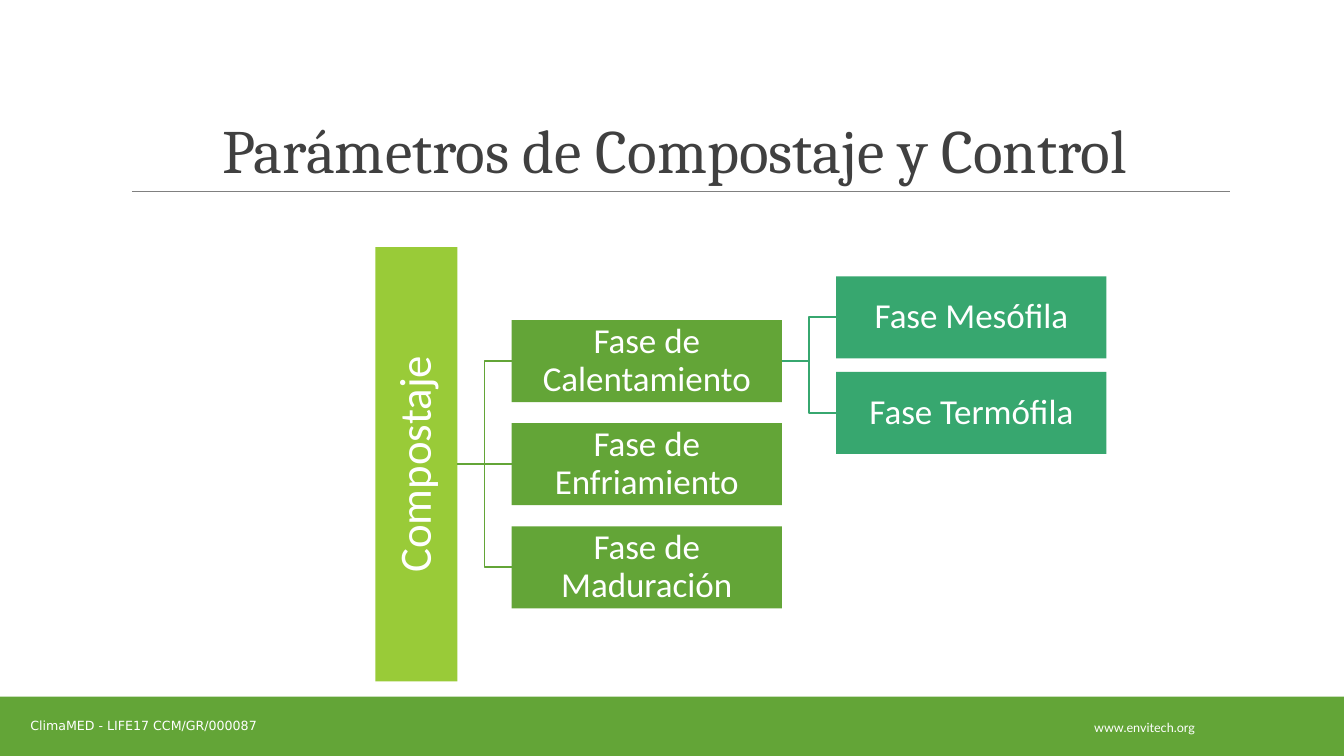
from lxml import etree
from pptx import Presentation
from pptx import util as u
from pptx.dml.color import RGBColor
from pptx.enum import shapes, text
from pptx.oxml.ns import qn

LIME, GREEN, TEAL = "99CB38", "63A537", "37A76F"
WHITE, DARK, GREY = "FFFFFF", "404040", "808080"


def colour(value):
    return RGBColor.from_string(value)


class Deck:
    body_font = "Calibri"
    inset = 1.44

    def __init__(self, width, height):
        self.presentation = Presentation()
        self.presentation.slide_width = u.Pt(width)
        self.presentation.slide_height = u.Pt(height)
        self.slide = self.presentation.slides.add_slide(self.presentation.slide_layouts[5])

    def set_text(self, shape, content, size, font, value, anchor=text.MSO_ANCHOR.MIDDLE,
                 spacing=1.0, after=0):
        frame = shape.text_frame
        frame.text = content
        frame.word_wrap = True
        frame.auto_size = text.MSO_AUTO_SIZE.NONE
        frame.vertical_anchor = anchor
        paragraph = frame.paragraphs[0]
        paragraph.alignment = text.PP_ALIGN.CENTER
        paragraph.line_spacing = spacing
        paragraph.space_before = u.Pt(0)
        paragraph.space_after = u.Pt(after)
        for run in paragraph.runs:
            run.font.size = u.Pt(size)
            run.font.name = font
            run.font.color.rgb = colour(value)

    def title(self, content, left, top, width, height):
        shape = self.slide.shapes.title
        shape.left, shape.top = u.Pt(left), u.Pt(top)
        shape.width, shape.height = u.Pt(width), u.Pt(height)
        self.set_text(shape, content, 44, "Cambria", DARK, text.MSO_ANCHOR.BOTTOM, 0.85)

    def label(self, content, font, left, top, width, height):
        box = self.slide.shapes.add_textbox(u.Pt(left), u.Pt(top), u.Pt(width), u.Pt(height))
        self.set_text(box, content, 9, font, WHITE)

    def rectangle(self, left, top, width, height, fill):
        shape = self.slide.shapes.add_shape(
            shapes.MSO_SHAPE.RECTANGLE, u.Pt(left), u.Pt(top), u.Pt(width), u.Pt(height))
        shape.shadow.inherit = False
        shape.fill.solid()
        shape.fill.fore_color.rgb = colour(fill)
        shape.line.fill.background()
        return shape

    def node(self, content, left, middle, width, height, fill, size=25, after=9):
        shape = self.rectangle(left, middle - height / 2, width, height, fill)
        frame = shape.text_frame
        frame.margin_left = frame.margin_right = u.Pt(self.inset)
        frame.margin_top = frame.margin_bottom = u.Pt(self.inset)
        self.set_text(shape, content, size, self.body_font, WHITE, spacing=0.9, after=after)
        return shape

    def line(self, start, end, value, width, kind=shapes.MSO_CONNECTOR.STRAIGHT):
        connector = self.slide.shapes.add_connector(
            kind, *(u.Pt(number) for number in (*start, *end)))
        connector.line.color.rgb = colour(value)
        connector.line.width = u.Pt(width)
        etree.SubElement(connector._element.spPr, qn("a:effectLst"))
        return connector

    def branch(self, parent, side, start, child, end, value):
        straight = start[1] == end[1]
        kind = shapes.MSO_CONNECTOR.STRAIGHT if straight else shapes.MSO_CONNECTOR.ELBOW
        connector = self.line(start, end, value, 1.25, kind)
        connector.begin_connect(parent, side)
        connector.end_connect(child, 1)
        connector.begin_x, connector.begin_y = u.Pt(start[0]), u.Pt(start[1])


def main():
    deck = Deck(960.48, 540)
    deck.title("Parámetros de Compostaje y Control", 86.4, 22.3, 792, 114.5)
    deck.line((94.3, 136.8), (879.1, 136.8), GREY, 0.5)
    deck.rectangle(0, 497.6, 960.48, 42.4, GREEN)
    deck.label("www.envitech.org", "Lato", 729.4, 505, 177, 28.8)
    deck.label("ClimaMED - LIFE17 CCM/GR/000087", "DejaVu Sans", -11.5, 504, 228.2, 28.8)

    node_width, node_height = 193.2, 58.6
    root_length, root_centre, middle = 310.2, 297.5, 331.6
    phase_left, phase_pitch = 365.6, 73.6
    subphase_left, subphase_pitch = 597.6, 68.2

    root = deck.node("Compostaje", root_centre - root_length / 2, middle,
                     root_length, node_height, LIME, size=32, after=11.4)
    root.rotation = 270
    root_right = root_centre + node_height / 2

    phases = []
    for index, name in enumerate(("Calentamiento", "Enfriamiento", "Maduración")):
        phase_middle = middle + (index - 1) * phase_pitch
        phase = deck.node(f"Fase de {name}", phase_left, phase_middle,
                          node_width, node_height, GREEN)
        deck.branch(root, 2, (root_right, middle), phase, (phase_left, phase_middle), GREEN)
        phases.append(phase)

    heating_middle = middle - phase_pitch
    for index, name in enumerate(("Mesófila", "Termófila")):
        subphase_middle = 226.7 + index * subphase_pitch
        subphase = deck.node(f"Fase {name}", subphase_left, subphase_middle,
                             node_width, node_height, TEAL)
        deck.branch(phases[0], 3, (phase_left + node_width, heating_middle),
                    subphase, (subphase_left, subphase_middle), TEAL)

    deck.presentation.save("out.pptx")


if __name__ == "__main__":
    main()
